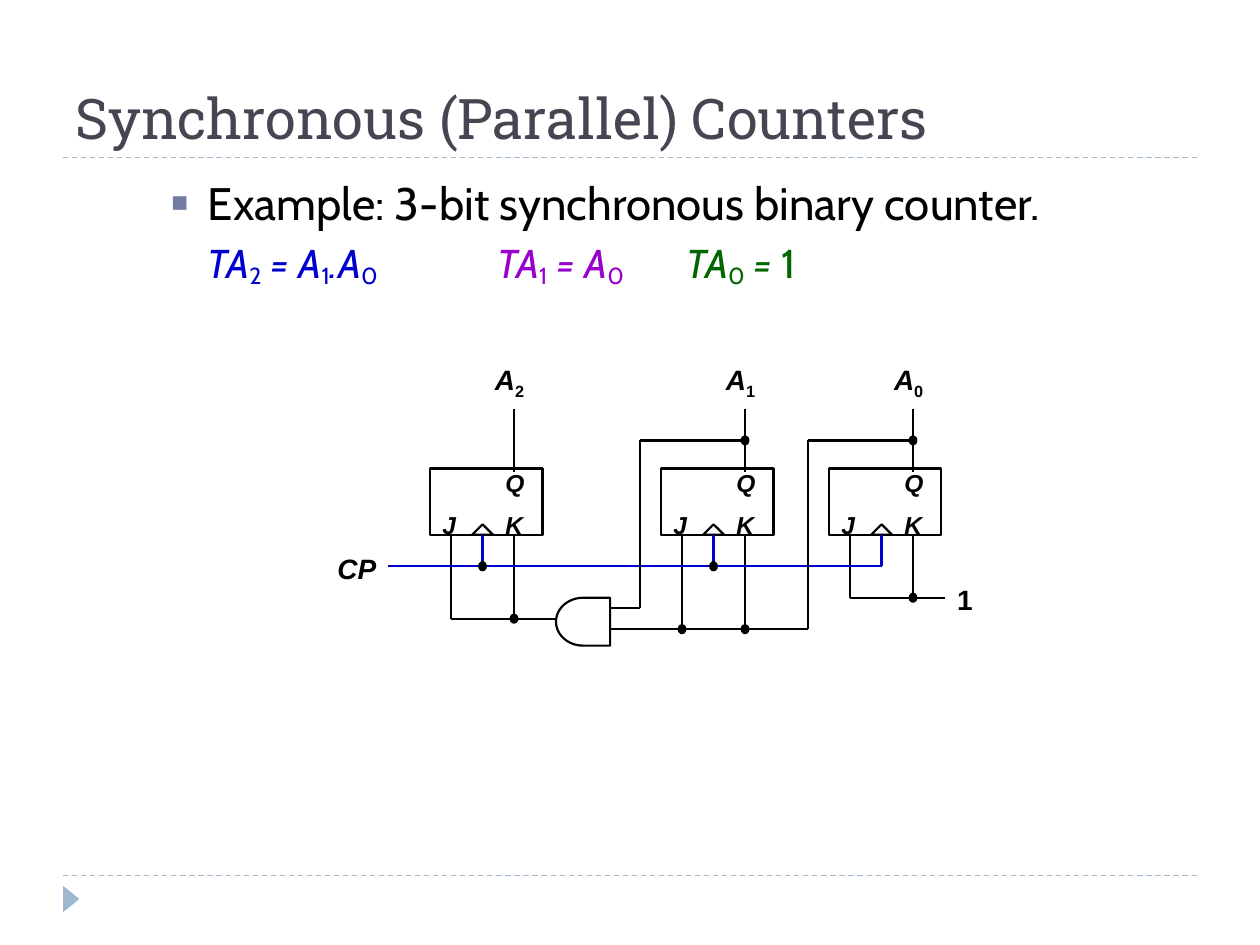
from dataclasses import dataclass

from lxml.etree import SubElement
from pptx import Presentation
from pptx.dml.color import RGBColor
from pptx.enum.dml import MSO_LINE_DASH_STYLE as DASH
from pptx.enum.shapes import MSO_CONNECTOR as CONN, MSO_SHAPE as SHAPE
from pptx.enum.text import MSO_ANCHOR as ANCHOR, MSO_AUTO_SIZE as FIT, PP_ALIGN as ALIGN
from pptx.oxml.ns import qn
from pptx.util import Inches, Pt


@dataclass(frozen=True)
class Theme:
    title: str = "464653"
    rule: str = "9FB8CD"
    bullet: str = "727CA3"
    ink: str = "000000"
    blue: str = "0000CC"
    purple: str = "9900CC"
    green: str = "006600"
    title_font: str = "Roboto Slab"
    body_font: str = "Cabin"
    label_font: str = "Arial"
    title_size: int = 32
    body_size: int = 26
    formula_size: int = 23
    label_size: int = 16
    pin_size: int = 14
    wire: float = 1.25


T = Theme()


def rgb(color):
    return RGBColor.from_string(color)


def style(r, font, size, color, bold=False, italic=False, base=0):
    f = r.font
    f.name, f.size, f.bold, f.italic = font, Pt(size), bold, italic
    f.color.rgb = rgb(color)
    if base:
        f._element.set("baseline", str(base * 1000))


def place(sp, box):
    sp.left, sp.top, sp.width, sp.height = (Inches(v) for v in box)


def add_line(shapes, start, end, color, width=T.wire):
    line = shapes.add_connector(CONN.STRAIGHT, *(Inches(v) for v in (*start, *end)))
    line.line.color.rgb = rgb(color)
    line.line.width = Pt(width)
    SubElement(line._element.spPr, qn("a:effectLst"))
    return line


def add_outline(shapes, kind, box, fill=None, line=T.ink, width=T.wire):
    sp = shapes.add_shape(kind, *(Inches(v) for v in box))
    sp.shadow.inherit = False
    if fill:
        sp.fill.solid()
        sp.fill.fore_color.rgb = rgb(fill)
    else:
        sp.fill.background()
    if line:
        sp.line.color.rgb = rgb(line)
        sp.line.width = Pt(width)
    else:
        sp.line.fill.background()
    return sp


def draw_frame(slide, box):
    """Dashed rules under the title and above the footer, with the corner marker."""
    left, top, width, height = box
    for y in (top, top + height):
        rule = add_line(slide.shapes, (left, y), (left + width, y), T.rule, 0.75)
        rule.line.dash_style = DASH.DASH
    marker = add_outline(slide.shapes, SHAPE.ISOSCELES_TRIANGLE,
                         (left - 0.04, top + height + 0.12, 0.21, 0.13), T.rule, None)
    marker.rotation = 90


def fill_title(slide, box):
    title = slide.shapes.title
    place(title, box)
    tf = title.text_frame
    tf.text = "Synchronous (Parallel) Counters"
    tf.auto_size, tf.vertical_anchor = FIT.NONE, ANCHOR.BOTTOM
    p = tf.paragraphs[0]
    p.alignment = ALIGN.LEFT
    style(p.runs[0], T.title_font, T.title_size, T.title)


def fill_body(slide, box):
    body = slide.placeholders[1]
    place(body, box)
    tf = body.text_frame
    tf.text = "Example: 3-bit synchronous binary counter."
    tf.auto_size = FIT.NONE

    # Bulleted statement
    p = tf.paragraphs[0]
    p.line_spacing, p.space_before = 0.8, Pt(0)
    pPr = p._p.get_or_add_pPr()
    pPr.set("marL", str(Inches(0.3)))
    pPr.set("indent", str(-Inches(0.3)))
    SubElement(SubElement(pPr, qn("a:buClr")), qn("a:srgbClr")).set("val", T.bullet)
    SubElement(pPr, qn("a:buSzPct")).set("val", "120000")
    SubElement(pPr, qn("a:buChar")).set("char", "▪")
    style(p.runs[0], T.body_font, T.body_size, T.ink)

    # Flip-flop input equations: upright runs are subscripts, except the last
    p = tf.add_paragraph()
    p.level, p.line_spacing, p.space_before = 1, 0.8, Pt(10)
    pPr = p._p.get_or_add_pPr()
    pPr.set("marL", str(Inches(0.6)))
    pPr.set("indent", str(-Inches(0.3)))
    SubElement(pPr, qn("a:buNone"))
    equations = (
        (T.blue, ("TA", "2", " = A", "1", ".A", "0\t\t")),
        (T.purple, ("TA", "1", " = A", "0\t")),
        (T.green, ("TA", "0", " = ")),
    )
    for color, parts in equations:
        for i, text in enumerate(parts):
            r = p.add_run()
            r.text = text
            sub = i % 2 == 1
            style(r, T.body_font, T.formula_size, color, italic=not sub, base=-14 * sub)
    r = p.add_run()
    r.text = "1"
    style(r, T.body_font, T.formula_size, T.green)


def draw_counter(slide, box):
    """Circuit on a grid of 63 columns by 28 rows."""
    left, top, width, height = box
    dx, dy = width / 63, height / 28
    shapes = slide.shapes.add_group_shape().shapes

    def at(col, row):
        return left + col * dx, top + row * dy

    def wire(*points, color=T.ink):
        for start, end in zip(points, points[1:]):
            add_line(shapes, at(*start), at(*end), color)

    def dot(col, row):
        x, y = at(col, row)
        add_outline(shapes, SHAPE.OVAL, (x - 0.03, y - 0.035, 0.06, 0.07), T.ink, width=0.75)

    def label(col, row, text, size=T.label_size, sub="", italic=True, w=0.45):
        tb = shapes.add_textbox(*(Inches(v) for v in (*at(col, row), w, size / 50 + 0.05)))
        tf = tb.text_frame
        tf.word_wrap = False
        p = tf.paragraphs[0]
        for part, base in ((text, 0), (sub, -25)):
            if part:
                r = p.add_run()
                r.text = part
                style(r, T.label_font, size, T.ink, True, italic and not base, base)

    def flip_flop(col, index, input_row):
        add_outline(shapes, SHAPE.RECTANGLE, (*at(col, 10.67), 0.89, 0.53), width=1.5)
        add_outline(shapes, SHAPE.ISOSCELES_TRIANGLE, (*at(col + 4, 16), 2 * dx, dy))
        for pin, pin_col, pin_row in (("J", 0, 14), ("K", 6, 14), ("Q", 6, 10)):
            label(col + pin_col, pin_row, pin, T.pin_size, w=0.34)
        label(col + 5, 0, "A", sub=index)
        wire((col + 8, 5), (col + 8, 11))
        wire((col + 5, 17), (col + 5, 20), color=T.blue)
        for pin_col in (2, 8):
            wire((col + pin_col, 17), (col + pin_col, input_row))

    for stage in ((10, "2", 25), (32, "1", 26), (48, "0", 23)):
        flip_flop(*stage)

    # Clock line and constant input
    label(0, 18, "CP", w=0.51)
    wire((6, 20), (53, 20), color=T.blue)
    label(59, 21, "1", italic=False, w=0.32)
    wire((50, 23), (59, 23))

    # AND gate with its output and its two inputs
    gate = add_outline(shapes, SHAPE.FLOWCHART_DELAY, (*at(22, 23), 0.43, 0.38))
    gate._element.spPr.find(qn("a:xfrm")).set("flipH", "1")
    wire((12, 25), (22, 25))
    wire((27, 24), (30, 24), (30, 8), (40, 8))
    wire((27, 26), (46, 26), (46, 8), (56, 8))

    # Junctions
    for joint in ((40, 8), (56, 8), (15, 20), (37, 20), (18, 25), (34, 26), (40, 26), (56, 23)):
        dot(*joint)


def main():
    prs = Presentation()
    prs.slide_width, prs.slide_height = Inches(10), Inches(7.5)
    slide = prs.slides.add_slide(prs.slide_layouts[1])
    draw_frame(slide, (0.5, 1.25, 9, 5.7))
    fill_title(slide, (0.5, 0.17, 9, 1.08))
    fill_body(slide, (1.25, 1.42, 8.33, 0.92))
    draw_counter(slide, (2.58, 2.83, 5.25, 2.33))
    prs.save("out.pptx")


if __name__ == "__main__":
    main()
